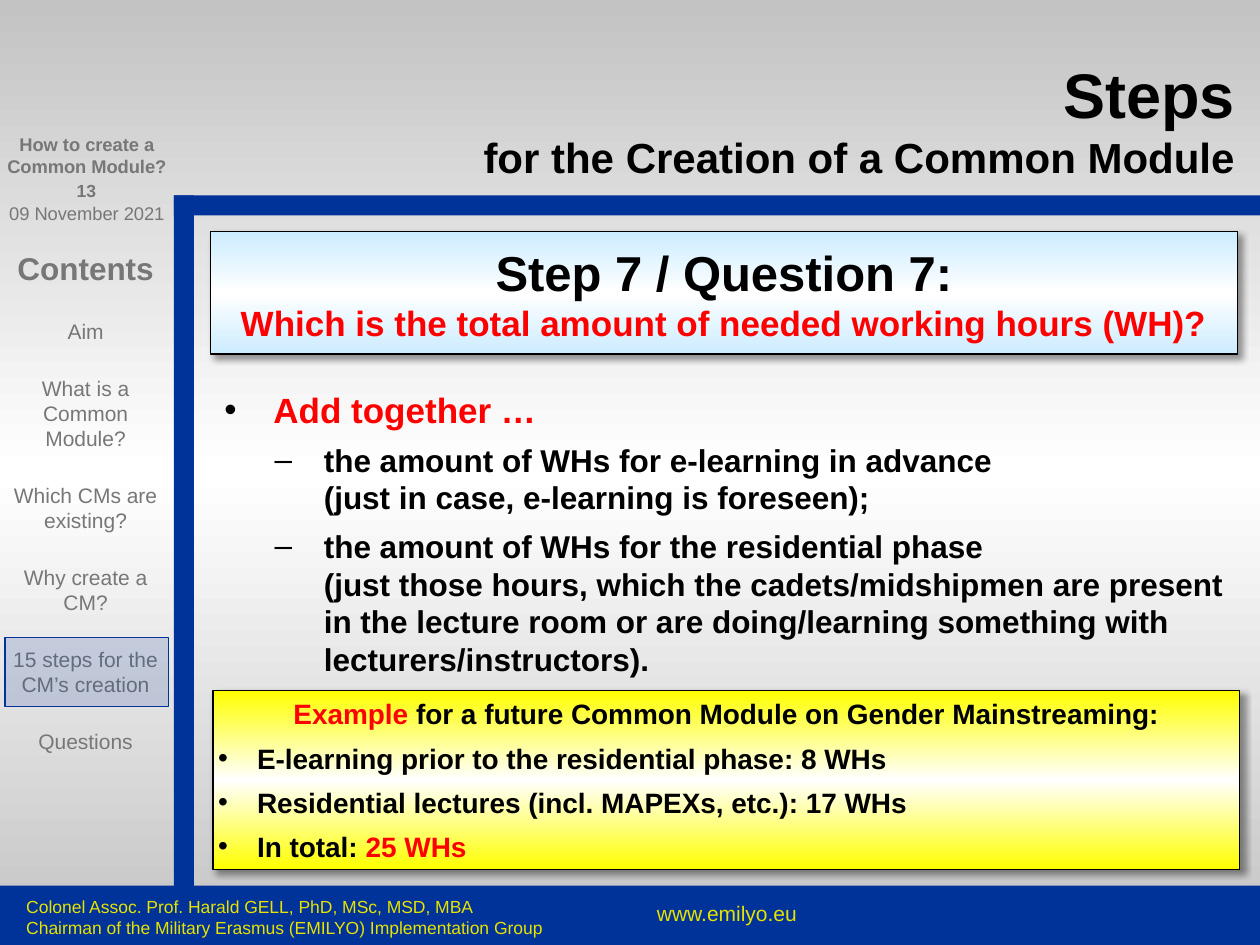
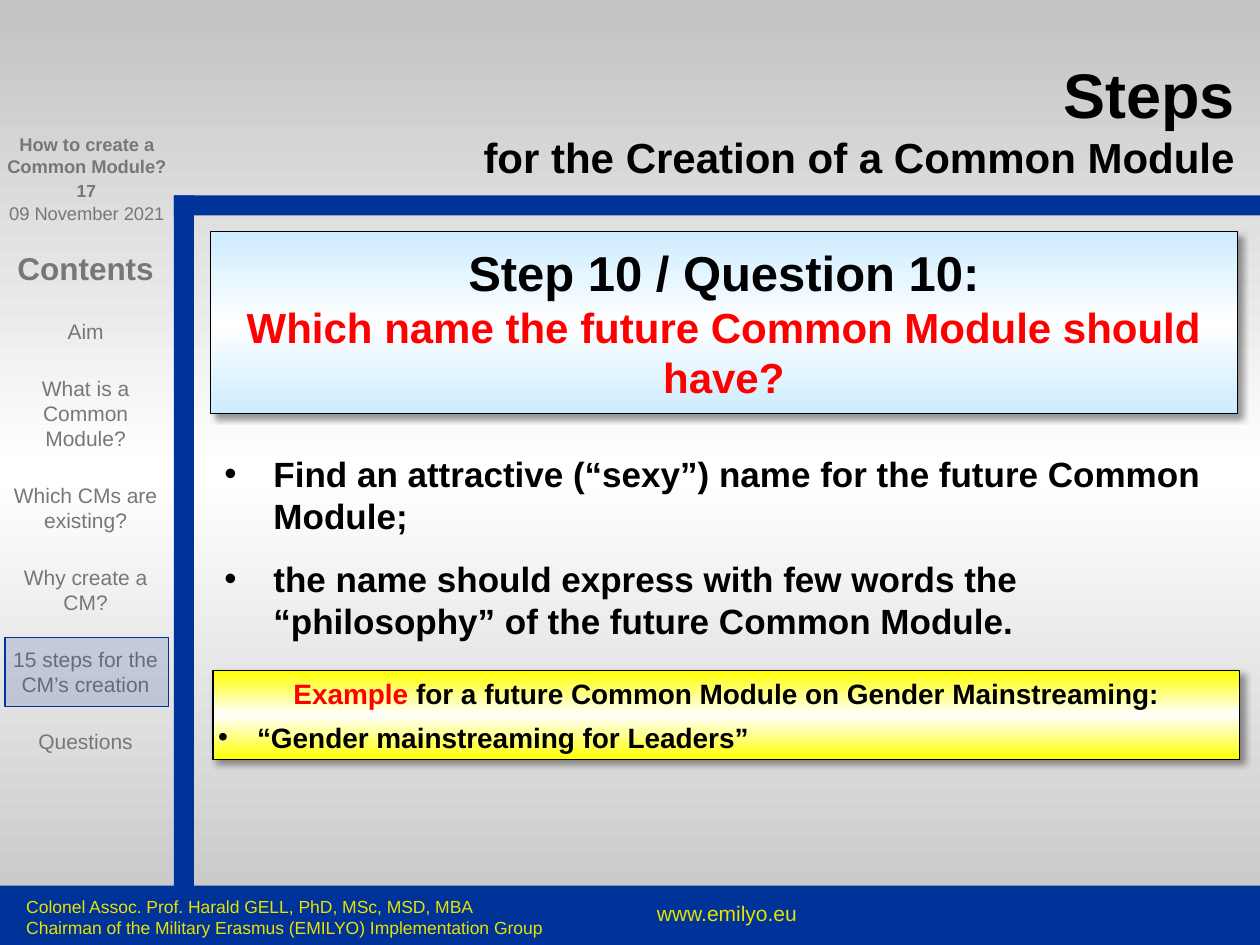
from pptx import Presentation
from pptx.util import Inches, Pt
from pptx.dml.color import RGBColor
from pptx.enum.shapes import MSO_SHAPE
from pptx.enum.text import PP_ALIGN as AL, MSO_ANCHOR as ANC
from pptx.oxml import parse_xml
from pptx.oxml.ns import nsdecls, qn

BLUE = RGBColor(0x00, 0x33, 0x99)
GREY = RGBColor(0x77, 0x77, 0x77)
SILVER = RGBColor(0xC3, 0xC3, 0xC3)
YELLOW = RGBColor(0xFF, 0xFF, 0x00)
GOLD = RGBColor(0xE7, 0xE2, 0x00)
SKY = RGBColor(0xCC, 0xEC, 0xFF)
WHITE = RGBColor(0xFF, 0xFF, 0xFF)
BLACK = RGBColor(0x00, 0x00, 0x00)
RED = RGBColor(0xFF, 0x00, 0x00)
FONT = "Arial"
CONTENTS = ["Aim", "What is a Common Module?", "Which CMs are existing?",
            "Why create a CM?", "15 steps for the CM’s creation", "Questions"]


def set_gradient(fill, owner, edge):
    fill.solid()
    stops = "".join(f'<a:gs pos="{pos}"><a:srgbClr val="{c}"/></a:gs>'
                    for pos, c in ((0, edge), (50000, WHITE), (100000, edge)))
    grad = parse_xml(f'<a:gradFill {nsdecls("a")} rotWithShape="1"><a:gsLst>{stops}</a:gsLst>'
                     '<a:lin ang="5400000" scaled="1"/></a:gradFill>')
    owner.replace(owner.find(qn("a:solidFill")), grad)


def run(text, size, color=BLACK, bold=True):
    return text, {"size": Pt(size), "bold": bold, "name": FONT}, color


def para(*runs, bullet=None, left=0, hang=0, **fmt):
    return runs, bullet, left, hang, fmt


def add_bullet(p, char, left, hang):
    pPr = p._p.get_or_add_pPr()
    pPr.set("marL", str(Inches(left)))
    pPr.set("indent", str(-Inches(hang)))
    pPr.append(parse_xml(f'<a:buClr {nsdecls("a")}><a:srgbClr val="{BLACK}"/></a:buClr>'))
    pPr.append(parse_xml(f'<a:buFont {nsdecls("a")} typeface="{FONT}"/>'))
    pPr.append(parse_xml(f'<a:buChar {nsdecls("a")} char="{char}"/>'))


def add_run(p, text, fmt, color):
    for i, line in enumerate(text.split("\n")):
        if i:
            p.add_line_break()
        if line:
            r = p.add_run()
            r.text = line
            for name, value in fmt.items():
                setattr(r.font, name, value)
            r.font.color.rgb = color


def write(sp, paras, ins=(0.1, 0.05), anchor=ANC.TOP, wrap=True):
    tf = sp.text_frame
    x, y = map(Inches, ins)
    frame = {"word_wrap": wrap, "vertical_anchor": anchor, "margin_left": x,
             "margin_right": x, "margin_top": y, "margin_bottom": y}
    for name, value in frame.items():
        setattr(tf, name, value)
    for i, (runs, bullet, left, hang, fmt) in enumerate(paras):
        p = tf.add_paragraph() if i else tf.paragraphs[0]
        if bullet:
            add_bullet(p, bullet, left, hang)
        for name, value in fmt.items():
            setattr(p, name, value)
        for r in runs:
            add_run(p, *r)


def add_text(s, at, paras, **frame):
    write(s.shapes.add_textbox(*map(Inches, at)), paras, **frame)


def add_rect(s, at, color, line=None):
    sp = s.shapes.add_shape(MSO_SHAPE.RECTANGLE, *map(Inches, at))
    sp.shadow.inherit = False
    sp.fill.solid()
    sp.fill.fore_color.rgb = color
    if line is None:
        sp.line.fill.background()
    else:
        sp.line.color.rgb = line
        sp.line.width = Pt(0.75)
    return sp


def add_panel(s, at, edge, paras, ins):
    sp = add_rect(s, at, edge, BLACK)
    spPr = sp._element.spPr
    set_gradient(sp.fill, spPr, edge)
    spPr.find(qn("a:effectLst")).append(parse_xml(
        f'<a:outerShdw {nsdecls("a")} blurRad="{Pt(4)}" dist="{Pt(3)}" dir="2700000" '
        'algn="tl" rotWithShape="0"><a:srgbClr val="000000"><a:alpha val="40000"/>'
        '</a:srgbClr></a:outerShdw>'))
    write(sp, paras, ins=ins, anchor=ANC.MIDDLE)


def add_frame(s, number):
    add_rect(s, (1.38, 1.55, 0.16, 5.6), BLUE)
    add_text(s, (0.44, 1.38, 0.49, 0.27),
             [para(run(number, 10, GREY), alignment=AL.CENTER)], wrap=False)
    add_rect(s, (1.38, 1.55, 8.62, 0.16), BLUE)
    entries = [run("Contents", 18, GREY)] + [run(c, 12, GREY, False) for c in CONTENTS]
    add_text(s, (0.05, 1.94, 1.26, 5.04),
             [para(e, alignment=AL.CENTER, space_after=Pt(18)) for e in entries],
             ins=(0.04, 0.04))
    add_text(s, (0, 1.06, 1.38, 0.82), [
        para(run("How to create a", 10.5, GREY), alignment=AL.CENTER),
        para(run("Common Module?", 10.5, GREY), alignment=AL.CENTER),
        para(run("09 November 2021", 10.5, GREY, False), alignment=AL.CENTER,
             space_before=Pt(14)),
    ], ins=(0, 0))
    add_rect(s, (0, 7.03, 10, 0.47), BLUE)
    add_text(s, (4.88, 7.1, 1.78, 0.35),
             [para(run("www.emilyo.eu", 12, GOLD, False), alignment=AL.CENTER)])
    add_text(s, (0.11, 7.06, 4.38, 0.35), [para(run(line, 10, GOLD, False)) for line in (
        "Colonel Assoc. Prof. Harald GELL, PhD, MSc, MSD, MBA",
        "Chairman of the Military Erasmus (EMILYO) Implementation Group")])
    add_text(s, (1.38, 0.19, 8.42, 1.25), [
        para(run("Steps\n", 36), run("for the Creation of a Common Module", 24),
             alignment=AL.RIGHT)], ins=(0, 0), anchor=ANC.BOTTOM)


def add_question(s, height, step, question, size):
    add_panel(s, (1.67, 1.84, 8.15, height), SKY, [
        para(run(f"Step {step} / Question {step}:\n", 28), run(question, size, RED),
             alignment=AL.CENTER, space_after=Pt(6))], (0, 0.04))


def point(r, gap):
    return para(r, bullet="•", left=0.39, hang=0.39, space_after=Pt(gap))


def subpoint(text):
    return para(run(text, 18), bullet="–", left=0.79, hang=0.39, level=1, space_after=Pt(6))


def add_points(s, top, height, points):
    add_text(s, (1.78, top, 7.99, height), points, ins=(0, 0.04))


def add_example(s, top, height, items):
    intro = para(run("Example ", 16, RED),
                 run("for a future Common Module on Gender Mainstreaming:", 16),
                 space_after=Pt(6))
    add_panel(s, (1.69, top, 8.15, height), YELLOW, [intro] + [
        para(*runs, bullet="•", left=0.31, hang=0.31, space_after=Pt(6)) for runs in items],
        (0.04, 0.04))


def add_highlight(s):
    sp = add_rect(s, (0.04, 5.06, 1.3, 0.55), BLUE, BLUE)
    color = sp._element.spPr.find(qn("a:solidFill"))[0]
    color.append(parse_xml(f'<a:alpha {nsdecls("a")} val="16000"/>'))


def new_slide(prs, number):
    s = prs.slides.add_slide(prs.slide_layouts[6])
    fill = s.background.fill
    fill.solid()
    set_gradient(fill, s.element.find(".//" + qn("p:bgPr")), SILVER)
    add_frame(s, number)
    return s


def working_hours_slide(prs):
    s = new_slide(prs, "13")
    add_question(s, 0.97, 7, "Which is the total amount of needed working hours (WH)?", 20)
    add_points(s, 3.04, 2.44, [
        point(run("Add together …", 20, RED), 6),
        subpoint("the amount of WHs for e-learning in advance\n"
                 "(just in case, e-learning is foreseen);"),
        subpoint("the amount of WHs for the residential phase\n"
                 "(just those hours, which the cadets/midshipmen are present in the lecture "
                 "room or are doing/learning something with lecturers/instructors)."),
    ])
    add_example(s, 5.48, 1.42, [
        [run("E-learning prior to the residential phase: 8 WHs", 16)],
        [run("Residential lectures (incl. MAPEXs, etc.): 17 WHs", 16)],
        [run("In total: ", 16), run("25 WHs", 16, RED)],
    ])
    add_highlight(s)


def module_name_slide(prs):
    s = new_slide(prs, "17")
    add_question(s, 1.44, 10, "Which name the future Common Module should have?", 24)
    add_points(s, 3.55, 1.93, [point(run(text, 20), 12) for text in (
        "Find an attractive (“sexy”) name for the future Common Module;",
        "the name should express with few words the “philosophy” of the future "
        "Common Module.")])
    add_example(s, 5.32, 0.71, [[run("“Gender mainstreaming for Leaders”", 16)]])
    add_highlight(s)


def main():
    prs = Presentation()
    prs.slide_width, prs.slide_height = Inches(10), Inches(7.5)
    working_hours_slide(prs)
    module_name_slide(prs)
    prs.save("out.pptx")


if __name__ == "__main__":
    main()
